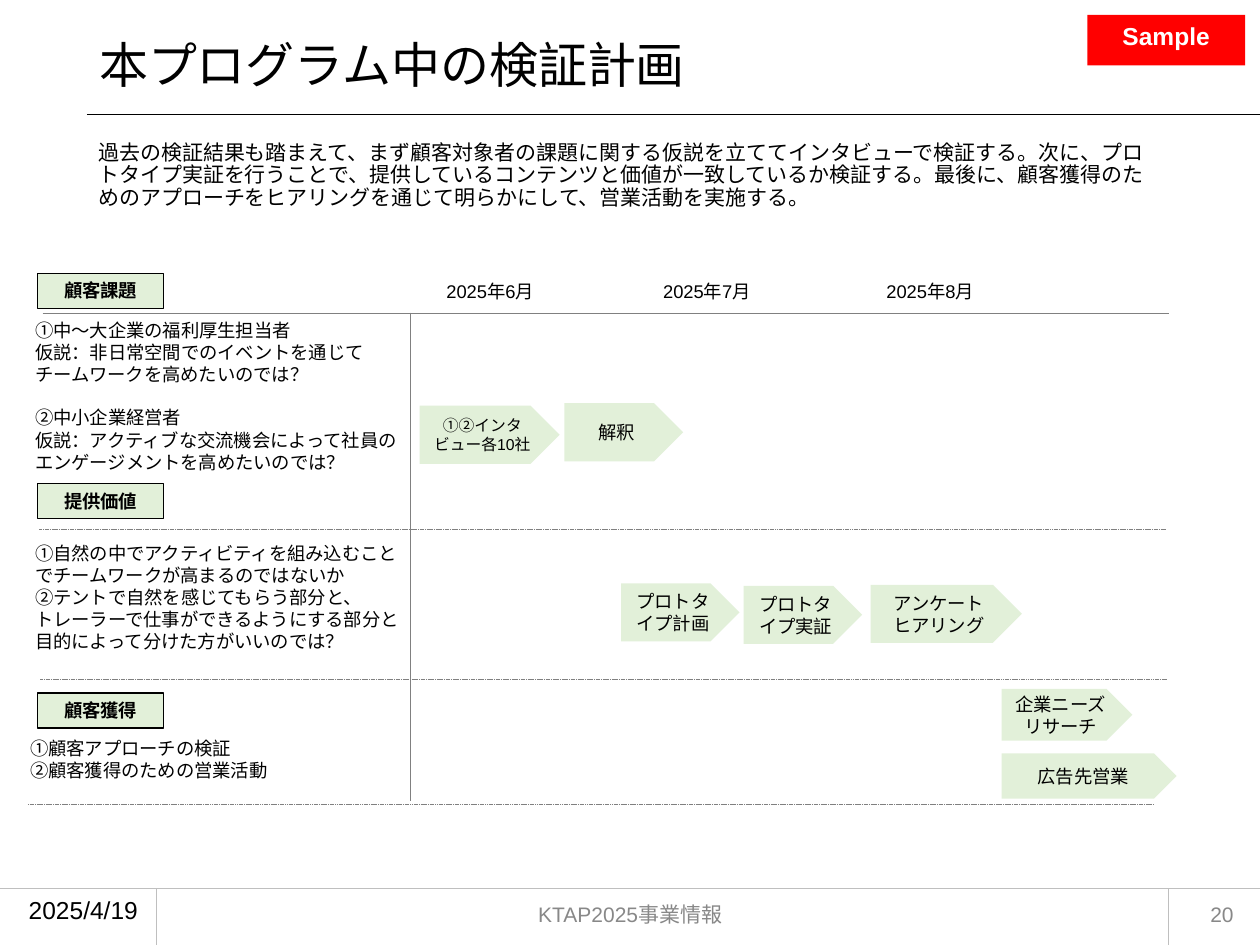
from lxml import etree
from pptx import Presentation
from pptx import util as u
from pptx.dml.color import RGBColor
from pptx.enum import dml, shapes, text
from pptx.oxml.ns import qn

HUES = {"ink": "000000", "pale": "E2F0D9", "red": "FF0000", "white": "FFFFFF",
        "rule": "808080", "edge": "BFBFBF", "dim": "888888"}
AL = text.PP_ALIGN
BOX = shapes.MSO_SHAPE.RECTANGLE
PLATE = shapes.MSO_SHAPE.PENTAGON

deck = Presentation()
deck.slide_width, deck.slide_height = u.Cm(25.4), u.Cm(19.05)
page = deck.slides.add_slide(deck.slide_layouts[6])


def put(words, left, top, wide, high, size=10.5, hue="ink", bold=False,
        align=AL.LEFT, mid=False, wrap=True, kind=None, fill="pale"):
    """Add a text box, or a filled shape when a kind is given."""
    area = [u.Cm(n) for n in (left, top, wide, high)]
    if kind is None:
        item = page.shapes.add_textbox(*area)
    else:
        item = page.shapes.add_shape(kind, *area)
        item.shadow.inherit = False
        item.fill.solid()
        item.fill.fore_color.rgb = RGBColor.from_string(HUES[fill])
        item.line.fill.background()
    frame = item.text_frame
    frame.text = words
    frame.word_wrap = wrap
    frame.vertical_anchor = text.MSO_ANCHOR.MIDDLE if mid else text.MSO_ANCHOR.TOP
    for para in frame.paragraphs:
        para.alignment = align
        for run in para.runs:
            run.font.name = "Arial"
            run.font.size = u.Pt(size)
            run.font.bold = bold
            run.font.color.rgb = RGBColor.from_string(HUES[hue])
    return item


def rule(x1, y1, x2, y2, hue, width=0.75, dash=None):
    """Add a straight line without a shadow."""
    line = page.shapes.add_connector(shapes.MSO_CONNECTOR.STRAIGHT,
                                     *[u.Cm(n) for n in (x1, y1, x2, y2)])
    line.line.color.rgb = RGBColor.from_string(HUES[hue])
    line.line.width = u.Pt(width)
    if dash:
        line.line.dash_style = dash
    etree.SubElement(line._element.spPr, qn("a:effectLst"))


# Title and footer
rule(1.75, 2.31, 25.4, 2.31, "ink")
rule(0, 17.91, 25.4, 17.91, "edge")
for x in (3.15, 23.55):
    rule(x, 17.91, x, 19.05, "edge")
put("本プログラム中の検証計画", 1.75, 0.25, 21.9, 2.06, size=28, mid=True)
put("2025/4/19", 0.33, 17.91, 2.82, 1.02, size=14)
put("KTAP2025事業情報", 8.41, 17.91, 8.59, 1.02, size=12, hue="dim",
    align=AL.CENTER, mid=True)
put("20", 23.57, 17.91, 1.55, 1.02, size=12, hue="dim", align=AL.RIGHT, mid=True)
put("Sample", 21.92, 0.3, 3.18, 1.02, size=14, hue="white", bold=True,
    align=AL.CENTER, kind=BOX, fill="red")

# Lead text
lead = put("過去の検証結果も踏まえて、まず顧客対象者の課題に関する仮説を立ててインタビューで検証する。"
           "次に、プロトタイプ実証を行うことで、提供しているコンテンツと価値が一致しているか検証する。"
           "最後に、顧客獲得のためのアプローチをヒアリングを通じて明らかにして、営業活動を実施する。",
           1.73, 2.74, 22, 1.98, size=12)
lead.text_frame.paragraphs[0].line_spacing = 0.9

# Chart grid
rule(0.86, 6.32, 23.57, 6.32, "rule")
rule(8.28, 6.3, 8.28, 16.15, "rule")
for x, y in ((0.79, 10.67), (0.81, 13.69), (0.56, 16.21)):
    rule(x, y, x + 22.71, y, "rule", 0.25, dml.MSO_LINE.SQUARE_DOT)

# Months
for month, x in ((6, 8.61), (7, 12.98), (8, 17.48)):
    put(f"2025年{month}月", x, 5.53, 2.54, 0.71, align=AL.CENTER)

# Row tags
for name, y in (("顧客課題", 5.51), ("提供価値", 9.75), ("顧客獲得", 13.97)):
    tag = put(name, 0.76, y, 2.54, 0.71, bold=True, align=AL.CENTER, kind=BOX)
    tag.line.color.rgb = RGBColor.from_string(HUES["ink"])
    tag.line.width = u.Pt(0.75)

# Row notes
need = put("①中〜大企業の福利厚生担当者\n仮説：非日常空間でのイベントを通じて\n"
           "チームワークを高めたいのでは？\n②中小企業経営者\n"
           "仮説：アクティブな交流機会によって社員の\nエンゲージメントを高めたいのでは？",
           0.46, 6.3, 8, 3.4, wrap=False)
need.text_frame.paragraphs[3].space_before = u.Pt(12.5)
put("①自然の中でアクティビティを組み込むこと\nでチームワークが高まるのではないか\n"
    "②テントで自然を感じてもらう部分と、\nトレーラーで仕事ができるようにする部分と\n"
    "目的によって分けた方がいいのでは？", 0.46, 10.8, 8.08, 2.49, wrap=False)
put("①顧客アプローチの検証\n②顧客獲得のための営業活動", 0.36, 14.73, 5.46, 1.14,
    wrap=False)

# Steps: words, left, top, width, height, text size
steps = [
    ("①②インタビュー各10社", 8.46, 8.18, 2.82, 1.17, 9),
    ("解釈", 11.38, 8.13, 2.39, 1.17, 10.5),
    ("プロトタイプ計画", 12.52, 11.76, 2.39, 1.17, 10.5),
    ("プロトタイプ実証", 14.99, 11.81, 2.39, 1.17, 10.5),
    ("アンケート\nヒアリング", 17.55, 11.79, 3.05, 1.17, 10.5),
    ("企業ニーズリサーチ", 20.19, 13.89, 2.64, 1.04, 10.5),
    ("広告先営業", 20.19, 15.19, 3.53, 0.91, 10.5),
]
for step in steps:
    put(*step, align=AL.CENTER, mid=True, kind=PLATE)

deck.save("out.pptx")
